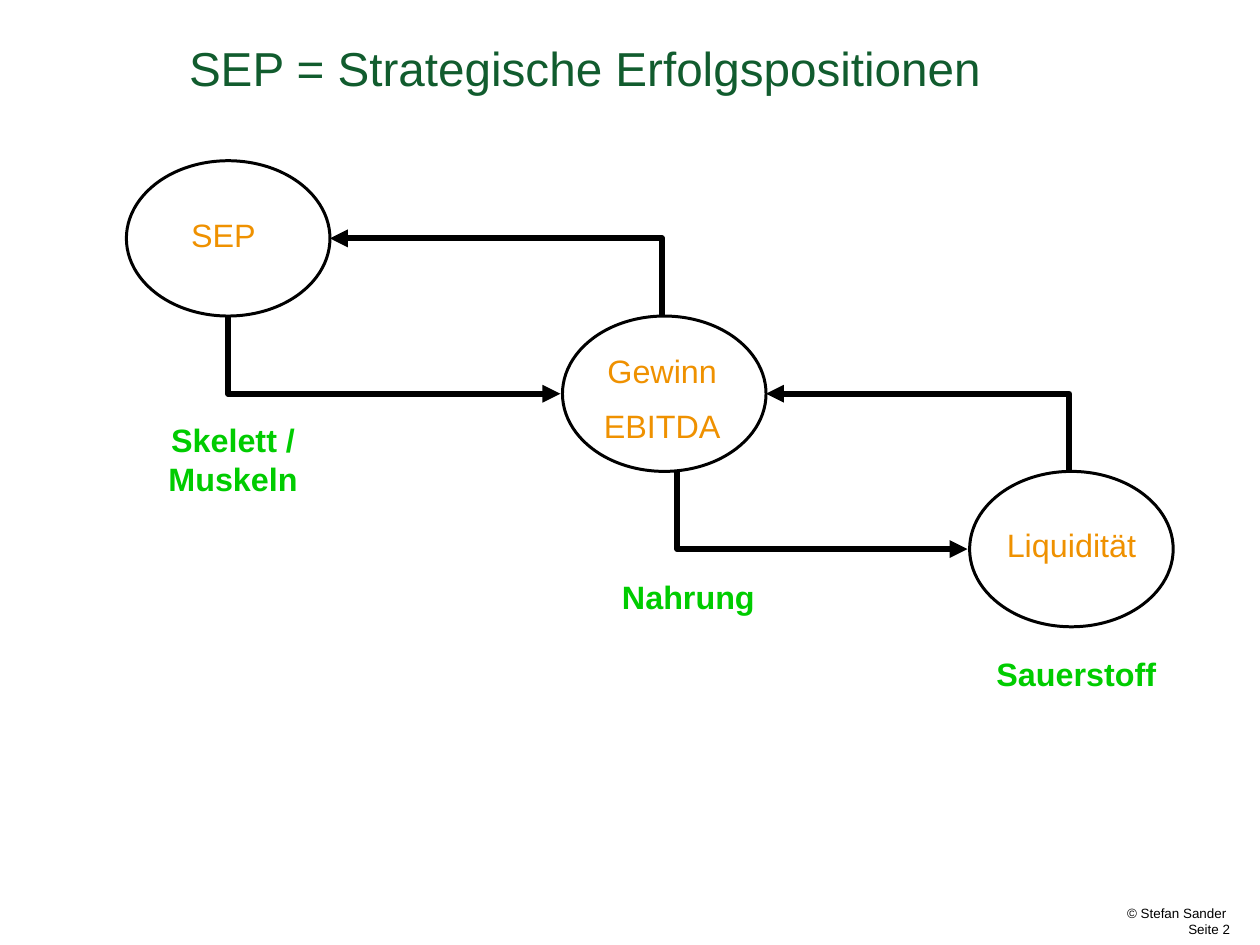
from pptx import Presentation
from pptx.dml.color import RGBColor
from pptx.enum.shapes import MSO_CONNECTOR, MSO_SHAPE
from pptx.enum.text import MSO_ANCHOR, PP_ALIGN
from pptx.oxml.ns import qn
from pptx.util import Inches, Pt
from lxml.etree import SubElement

WIDE, HIGH = 11.76, 8.82
COLORS = {"ink": "000000", "title": "115C2E", "name": "EF9100",
          "role": "00CC00", "paper": "FFFFFF"}
OVAL_W, OVAL_H = 1.9, 1.45  # one cell of the staircase
TOP = 1.5
LEFTS = (1.18, 5.25, 9.05)
LINE_H = 0.47


def color(key):
    return RGBColor.from_string(COLORS[key])


def inches(box):
    return [Inches(v) for v in box]


def write(shape, text, size=21.7, tint="name", bold=False, inset=None,
          align=PP_ALIGN.CENTER, anchor=MSO_ANCHOR.MIDDLE, gap=0, lead=None):
    frame = shape.text_frame
    frame.word_wrap = True
    frame.vertical_anchor = anchor
    if inset is not None:
        frame.margin_left = frame.margin_right = Inches(inset)
        frame.margin_top = frame.margin_bottom = Inches(inset)
    for i, line in enumerate(text.split("\n")):
        para = frame.add_paragraph() if i else frame.paragraphs[0]
        para.alignment = align
        para.space_before = Pt(gap if i else 0)
        if lead:
            para.line_spacing = lead
        run = para.add_run()
        run.text = line
        font = run.font
        font.name, font.size, font.bold = "Arial", Pt(size), bold
        font.color.rgb = color(tint)


def head(slide, box):
    title = slide.shapes.title
    title.left, title.top, title.width, title.height = inches(box)
    write(title, "SEP = Strategische Erfolgspositionen", size=32, tint="title",
          inset=0, align=PP_ALIGN.LEFT, anchor=MSO_ANCHOR.TOP, lead=0.85)


def node(slide, box, text, label, filled=False):
    """Oval with a name; label is the name's box relative to the oval."""
    group = slide.shapes.add_group_shape()
    oval = group.shapes.add_shape(MSO_SHAPE.OVAL, *inches(box))
    oval.shadow.inherit = False
    if filled:
        oval.fill.solid()
        oval.fill.fore_color.rgb = color("paper")
    else:
        oval.fill.background()
    oval.line.color.rgb = color("ink")
    oval.line.width = Pt(2)
    x, y, w, h = label
    name = group.shapes.add_textbox(*inches((box[0] + x, box[1] + y, w, h)))
    write(name, text, gap=11)


def arrow(slide, start, end):
    """Elbow that leaves vertically and arrives horizontally."""
    link = slide.shapes.add_connector(MSO_CONNECTOR.ELBOW,
                                      *inches((*start, *end)))
    link.line.color.rgb = color("ink")
    link.line.width = Pt(4)
    props = link._element.spPr
    guides = props.find(qn("a:prstGeom")).get_or_add_avLst()
    SubElement(guides, qn("a:gd"), name="adj1", fmla="val 0")
    SubElement(props.find(qn("a:ln")), qn("a:tailEnd"), type="triangle")
    SubElement(props, qn("a:effectLst"))


def stairs(slide, boxes):
    names = ("SEP", "Gewinn\nEBITDA", "Liquidität")
    labels = ((0.27, 0.45, 1.27, LINE_H), (0.27, 0.26, 1.32, 1.01),
              (0.09, 0.45, 1.72, LINE_H))
    for i, (box, name, label) in enumerate(zip(boxes, names, labels)):
        node(slide, box, name, label, filled=i == 2)

    # Arrows down and back up between neighbours
    shifts = (0, 0.12)
    for (x, y, w, h), (nx, ny, nw, nh), shift in zip(boxes, boxes[1:], shifts):
        arrow(slide, (x + w / 2 + shift, y + h), (nx - 0.02, ny + nh / 2))
        arrow(slide, (nx + nw / 2 - 0.02, ny), (x + w, y + h / 2))


def roles(slide, boxes):
    texts = ("Skelett / Muskeln", "Nahrung", "Sauerstoff")
    drops = ((0, 0.92, 0.83), (0.18, 0.93, LINE_H), (0, 0.2, LINE_H))
    for (x, y, w, h), text, (dx, dy, tall) in zip(boxes, texts, drops):
        place = (x + dx, y + h + dy, 1.99, tall)
        write(slide.shapes.add_textbox(*inches(place)), text,
              tint="role", bold=True)


def foot(slide, box):
    write(slide.shapes.add_textbox(*inches(box)), "© Stefan Sander \n Seite 2",
          size=9, tint="ink", inset=0, align=PP_ALIGN.RIGHT,
          anchor=MSO_ANCHOR.TOP)


def main():
    deck = Presentation()
    deck.slide_width, deck.slide_height = Inches(WIDE), Inches(HIGH)
    slide = deck.slides.add_slide(deck.slide_layouts[5])
    boxes = [(x, TOP + i * OVAL_H, OVAL_W, OVAL_H)
             for i, x in enumerate(LEFTS)]
    head(slide, (0.15 * WIDE, 0.05 * HIGH, 0.81 * WIDE, 0.12 * HIGH))
    stairs(slide, boxes)
    roles(slide, boxes)
    foot(slide, (4.78, HIGH - 0.37, 6.7, 0.3))
    deck.save("out.pptx")


if __name__ == "__main__":
    main()
